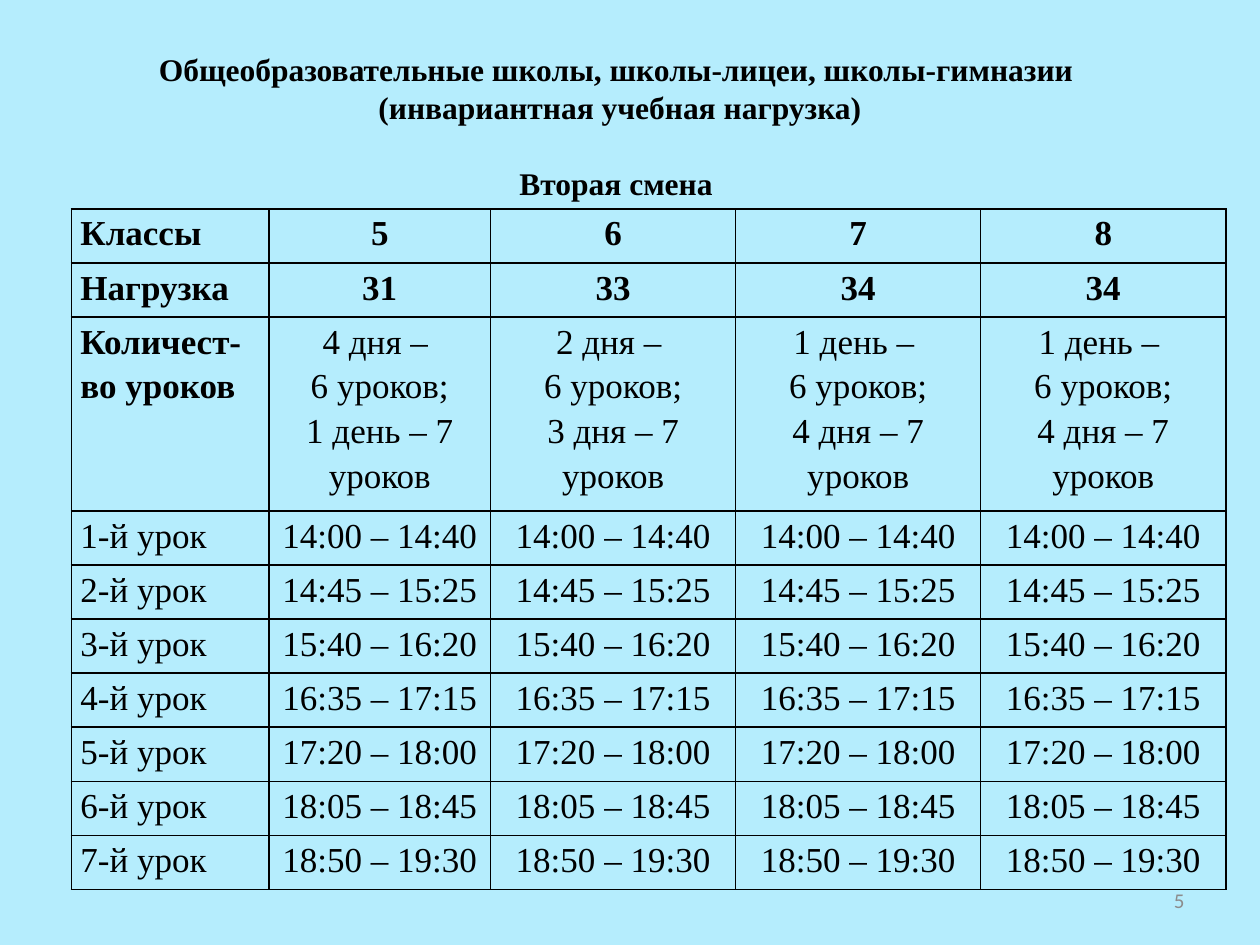
from dataclasses import dataclass

from lxml import etree
from pptx import Presentation
from pptx import util as u
from pptx.dml.color import RGBColor
from pptx.enum import text
from pptx.oxml.ns import qn

LEFT, CENTER, RIGHT = text.PP_ALIGN.LEFT, text.PP_ALIGN.CENTER, text.PP_ALIGN.RIGHT


@dataclass(frozen=True)
class Theme:
    background: str = "B5EDFD"
    ink: str = "000000"
    muted: str = "8C8C8C"
    font: str = "Times New Roman"
    number_font: str = "Calibri"
    title_size: int = 18
    table_size: int = 20
    number_size: int = 12
    border: int = 1


def write(tf, lines, *, size, font, color, bold=False, align=LEFT, spacing=None):
    """Fill a text frame with one paragraph per line."""
    for i, line in enumerate(lines):
        p = tf.paragraphs[0] if i == 0 else tf.add_paragraph()
        p.alignment = align
        if spacing:
            p.line_spacing = spacing
        r = p.add_run()
        r.text = line
        r.font.size = u.Pt(size)
        r.font.name = font
        r.font.bold = bold
        r.font.color.rgb = RGBColor.from_string(color)


def add_borders(cell, color, width):
    tc_pr = cell._tc.get_or_add_tcPr()
    for i, side in enumerate(("lnL", "lnR", "lnT", "lnB")):
        ln = etree.Element(qn(f"a:{side}"), w=str(u.Pt(width)))
        fill = etree.SubElement(ln, qn("a:solidFill"))
        etree.SubElement(fill, qn("a:srgbClr"), val=color)
        tc_pr.insert(i, ln)


class ScheduleSlide:
    def __init__(self, prs, theme):
        self.theme = theme
        self.s = prs.slides.add_slide(prs.slide_layouts[6])
        fill = self.s.background.fill
        fill.solid()
        fill.fore_color.rgb = RGBColor.from_string(theme.background)

    def text_box(self, lines, left, top, width, height, anchor, **style):
        sp = self.s.shapes.add_textbox(*map(u.Cm, (left, top, width, height)))
        tf = sp.text_frame
        tf.word_wrap = True
        tf.vertical_anchor = anchor
        write(tf, lines, **style)
        return tf

    def title(self, lines, *box):
        t = self.theme
        tf = self.text_box(lines, *box, text.MSO_ANCHOR.TOP, size=t.title_size,
                           font=t.font, color=t.ink, bold=True, align=CENTER)
        tf.paragraphs[-1].space_before = u.Pt(21.6)

    def slide_number(self, number, *box):
        t = self.theme
        self.text_box([number], *box, text.MSO_ANCHOR.MIDDLE, size=t.number_size,
                      font=t.number_font, color=t.muted, align=RIGHT)

    def table(self, rows, left, top, widths, heights, bold_rows):
        """Draw the grid; the first column is bold through the lesson-count row."""
        frame = self.s.shapes.add_table(
            len(rows), len(widths), u.Cm(left), u.Cm(top),
            u.Cm(sum(widths)), u.Cm(sum(heights)))
        table = frame.table
        table.first_row = table.horz_banding = False
        for column, width in zip(table.columns, widths):
            column.width = u.Cm(width)
        for row, height in zip(table.rows, heights):
            row.height = u.Cm(height)
        for i, row in enumerate(rows):
            for j, value in enumerate(row):
                bold = i < bold_rows or (i == bold_rows and j == 0)
                self.cell(table.cell(i, j), value, bold, CENTER if j else LEFT)

    def cell(self, cell, value, bold, align):
        t = self.theme
        cell.margin_left = cell.margin_right = u.Cm(0.18)
        cell.margin_top = cell.margin_bottom = 0
        cell.fill.background()
        add_borders(cell, t.ink, t.border)
        write(cell.text_frame, value.split("\n"), size=t.table_size, font=t.font,
              color=t.ink, bold=bold, align=align, spacing=1.15)


def lesson_count(six, seven):
    return f"{six} – \n6 уроков;\n{seven} – 7 уроков"


def main():
    prs = Presentation()
    prs.slide_width, prs.slide_height = u.Cm(25.4), u.Cm(19.05)
    slide = ScheduleSlide(prs, Theme())

    slide.slide_number("5", 18.2, 17.65, 5.93, 1.01)
    slide.title(["Общеобразовательные школы, школы-лицеи, школы-гимназии",
                 " (инвариантная учебная нагрузка)",
                 "Вторая смена"], 0.84, 0.89, 23.16, 3.33)

    lesson_times = ["14:00 – 14:40", "14:45 – 15:25", "15:40 – 16:20", "16:35 – 17:15",
                    "17:20 – 18:00", "18:05 – 18:45", "18:50 – 19:30"]
    rows = [
        ["Классы", "5", "6", "7", "8"],
        ["Нагрузка", "31", "33", "34", "34"],
        ["Количест-\nво уроков",
         lesson_count("4 дня", "1 день"),
         lesson_count("2 дня", "3 дня"),
         lesson_count("1 день", "4 дня"),
         lesson_count("1 день", "4 дня")],
    ]
    rows += [[f"{n}-й урок"] + [time] * 4 for n, time in enumerate(lesson_times, 1)]

    row_height = 1.09
    slide.table(rows, 1.44, 4.21,
                widths=[3.98, 4.47] + [4.94] * 3,
                heights=[row_height] * 2 + [3.91] + [row_height] * len(lesson_times),
                bold_rows=2)

    prs.save("out.pptx")


if __name__ == "__main__":
    main()
